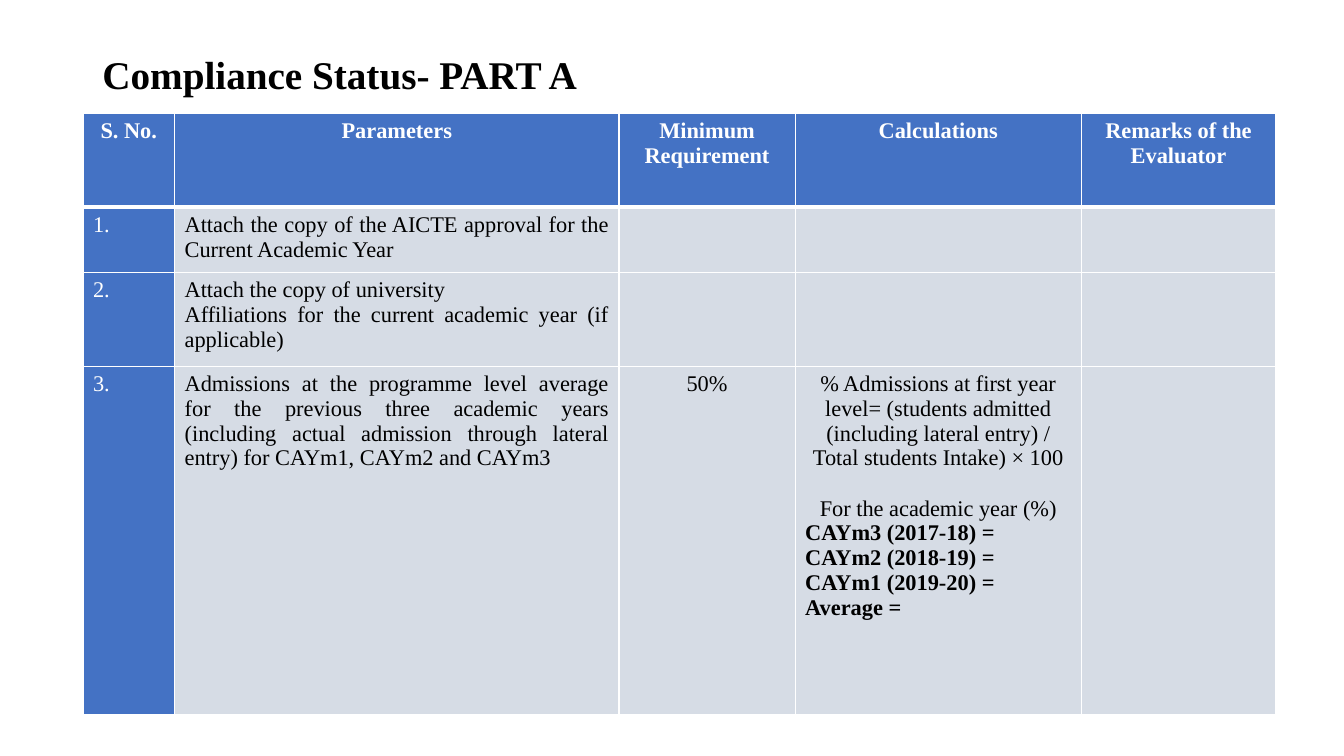
from lxml import etree
from pptx import Presentation
from pptx.dml.color import RGBColor
from pptx.enum.text import MSO_ANCHOR, PP_ALIGN
from pptx.oxml.ns import qn
from pptx.util import Cm, Pt

LEFT, CENTER, JUSTIFY = PP_ALIGN.LEFT, PP_ALIGN.CENTER, PP_ALIGN.JUSTIFY
TOP = MSO_ANCHOR.TOP
BLUE = RGBColor(0x44, 0x72, 0xC4)
PALE = RGBColor(0xD6, 0xDC, 0xE5)
WHITE = RGBColor(0xFF, 0xFF, 0xFF)
BLACK = RGBColor(0x00, 0x00, 0x00)
FONT = "Times New Roman"

TITLE = "Compliance Status- PART A"
HEADINGS = ["S. No.", "Parameters", "Minimum Requirement", "Calculations",
            "Remarks of the Evaluator"]
CRITERIA = [
    (["1."],
     ["Attach the copy of the AICTE approval for the Current Academic Year"],
     [], [], []),
    (["2."],
     ["Attach the copy of university",
      "Affiliations for the current academic year (if applicable)"],
     [], [], []),
    (["3."],
     ["Admissions at the programme level average for the previous three academic "
      "years (including actual admission through lateral entry) for CAYm1, CAYm2 "
      "and CAYm3"],
     ["50%"],
     ["% Admissions at first year level= (students admitted (including lateral "
      "entry) / Total students Intake) × 100",
      "For the academic year (%)",
      "CAYm3 (2017-18) =",
      "CAYm2 (2018-19) =",
      "CAYm1 (2019-20) =",
      "Average ="],
     []),
]
COLUMN_WIDTHS = [2.31, 11.2, 4.44, 7.21, 4.9]
ROW_HEIGHTS = [2.36, 1.65, 2.36, 8.79]
COLUMN_ALIGNMENTS = [LEFT, JUSTIFY, CENTER, CENTER, CENTER]
YEAR_RESULTS = CRITERIA[2][3][2:]
YEAR_INTRO = CRITERIA[2][3][1]


def add_run(paragraph, text, size, color, bold):
    run = paragraph.add_run()
    run.text = text
    run.font.name = FONT
    run.font.size = Pt(size)
    run.font.bold = bold
    run.font.color.rgb = color


def set_borders(cell, row):
    properties = cell._tc.get_or_add_tcPr()
    widths = {"a:lnL": 1, "a:lnR": 1,
              "a:lnT": 3 if row == 1 else 1,
              "a:lnB": 3 if row == 0 else 1}
    for side, width in widths.items():
        line = etree.SubElement(properties, qn(side), w=str(Pt(width)))
        fill = etree.SubElement(line, qn("a:solidFill"))
        etree.SubElement(fill, qn("a:srgbClr"), val=str(WHITE))


def fill_cell(cell, row, column, lines):
    is_header = row == 0
    is_blue = is_header or column == 0
    set_borders(cell, row)
    cell.fill.solid()
    cell.fill.fore_color.rgb = BLUE if is_blue else PALE
    frame = cell.text_frame
    for index, text in enumerate(lines):
        paragraph = frame.add_paragraph() if index else frame.paragraphs[0]
        is_result = text in YEAR_RESULTS
        if is_header:
            paragraph.alignment = CENTER
        else:
            paragraph.alignment = LEFT if is_result else COLUMN_ALIGNMENTS[column]
        if text == YEAR_INTRO:
            paragraph.space_before = Pt(18)
        add_run(paragraph, text, 16, WHITE if is_blue else BLACK,
                is_header or is_result)


def add_title(slide):
    title = slide.shapes.add_textbox(Cm(2.33), Cm(1.01), Cm(29.21), Cm(3.68))
    frame = title.text_frame
    frame.word_wrap = True
    frame.vertical_anchor = TOP
    frame.margin_top = Cm(0.4)
    paragraph = frame.paragraphs[0]
    paragraph.line_spacing = 0.9
    add_run(paragraph, TITLE, 28, BLACK, True)


def add_compliance_table(slide):
    rows = [[[heading] for heading in HEADINGS], *CRITERIA]
    table = slide.shapes.add_table(
        len(rows), len(HEADINGS), Cm(2.09), Cm(2.86),
        Cm(sum(COLUMN_WIDTHS)), Cm(sum(ROW_HEIGHTS))).table
    table.horz_banding = False
    for column, width in zip(table.columns, COLUMN_WIDTHS):
        column.width = Cm(width)
    for row, height in zip(table.rows, ROW_HEIGHTS):
        row.height = Cm(height)
    for r, row in enumerate(rows):
        for c, lines in enumerate(row):
            fill_cell(table.cell(r, c), r, c, lines)


def main():
    deck = Presentation()
    deck.slide_width, deck.slide_height = Cm(33.87), Cm(19.05)
    slide = deck.slides.add_slide(deck.slide_layouts[6])
    add_title(slide)
    add_compliance_table(slide)
    deck.save("out.pptx")


if __name__ == "__main__":
    main()
